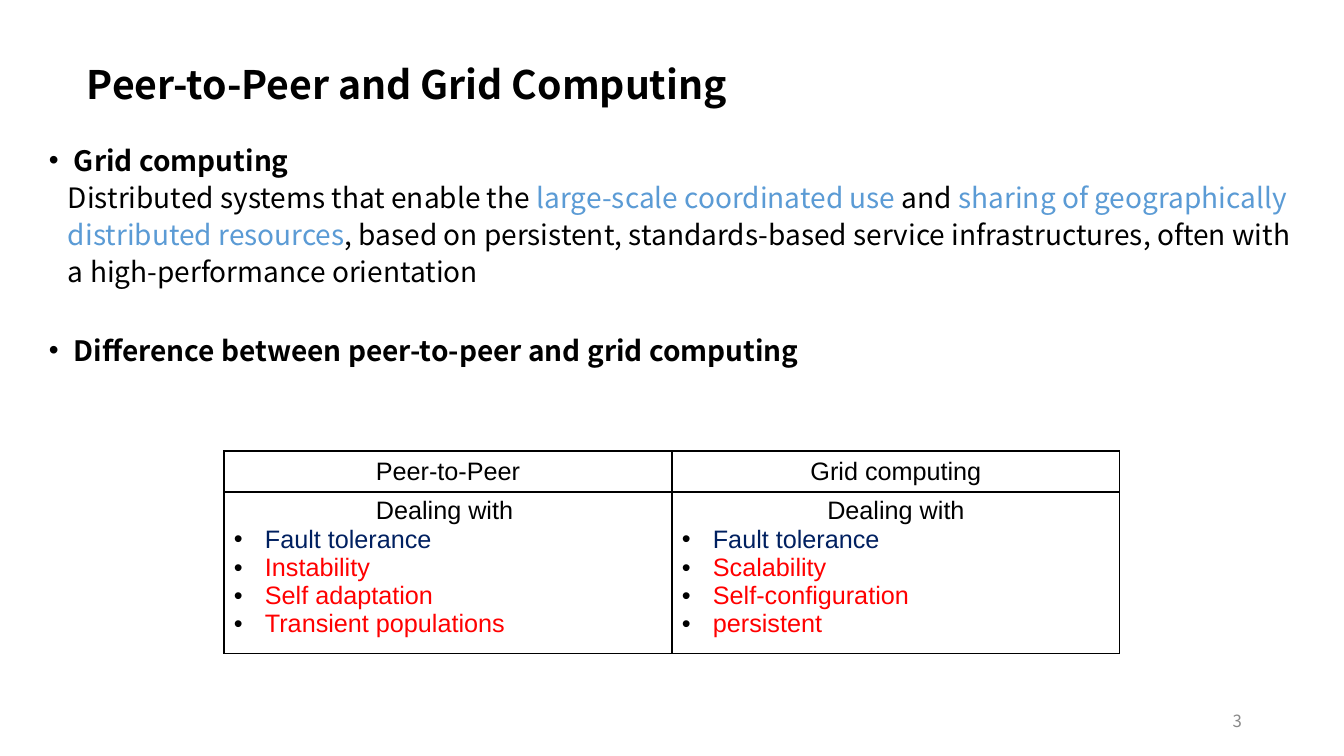
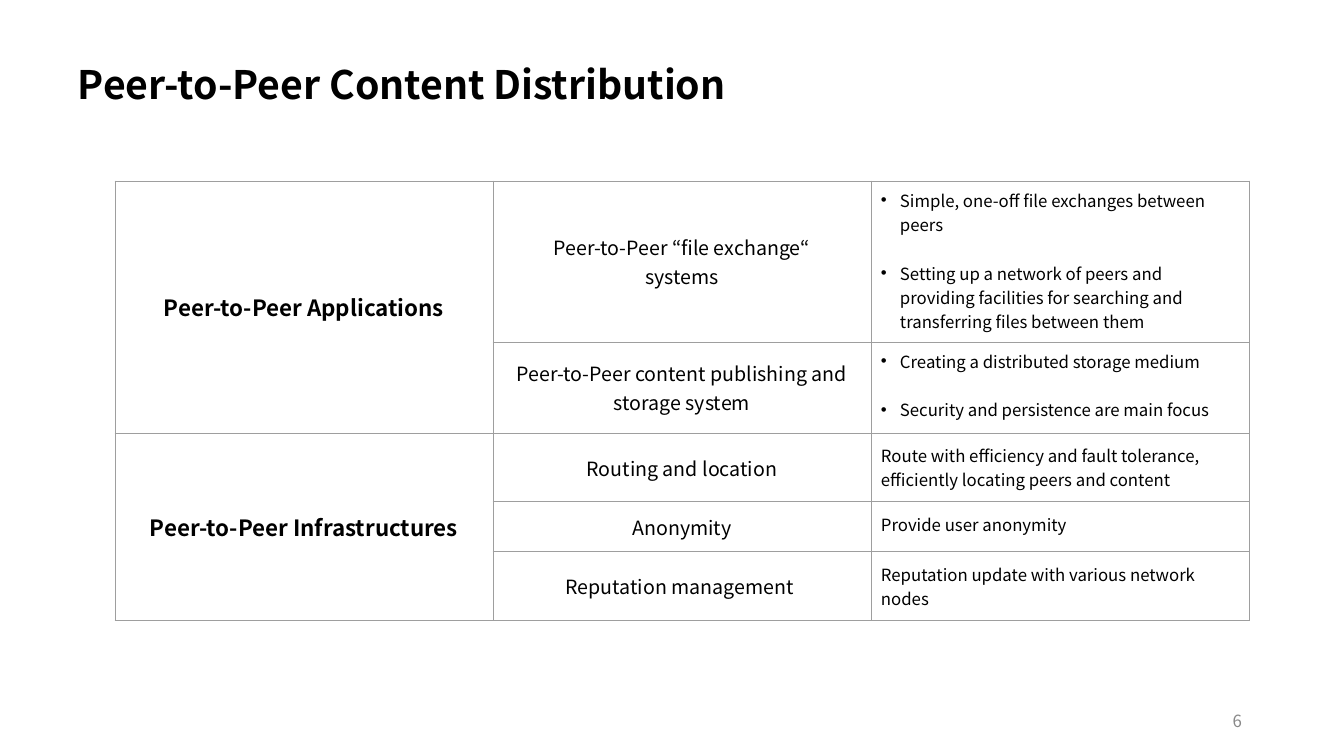
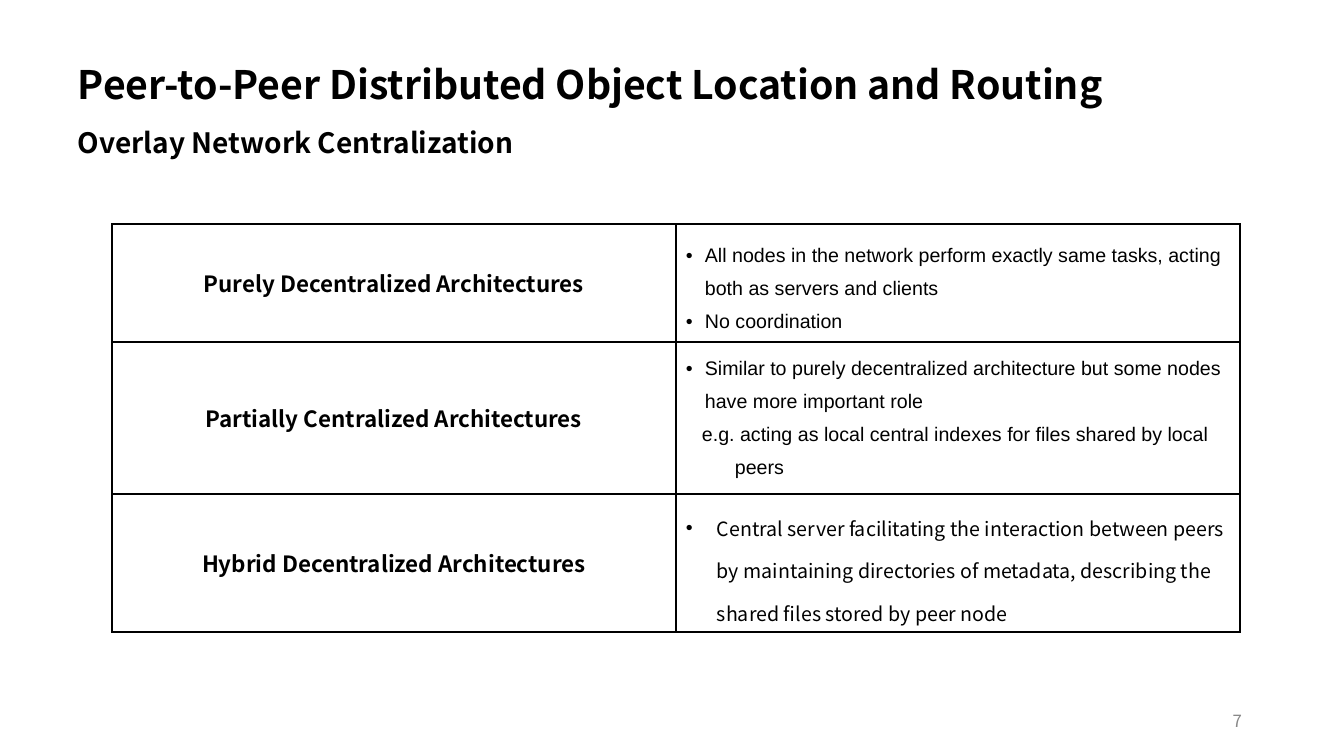
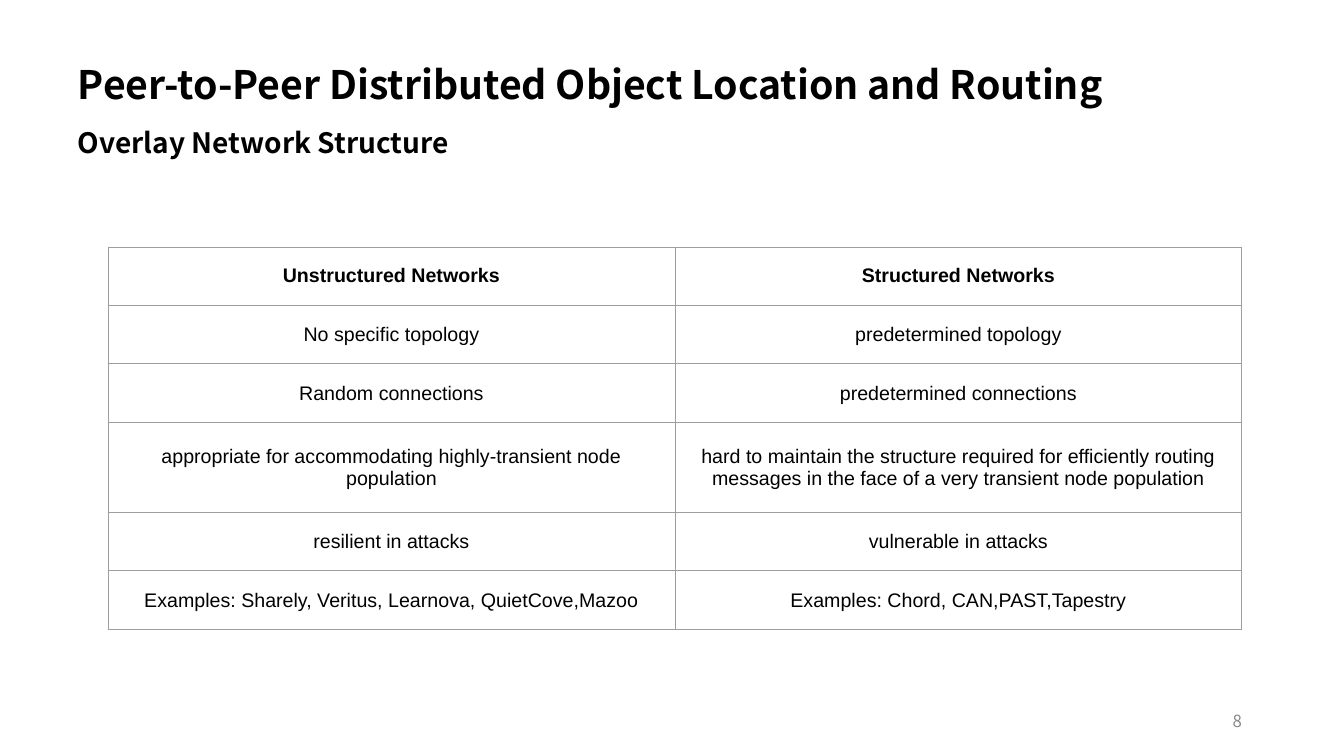
from dataclasses import dataclass, field, replace
from typing import Any, Optional

from lxml.etree import SubElement
from pptx import Presentation
from pptx.dml.color import RGBColor
from pptx.enum.text import MSO_ANCHOR as Anchor, PP_ALIGN as Align
from pptx.oxml.ns import qn
from pptx.util import Emu, Pt

EMU_PER_PX = 12192000 / 1344


def px(length: int) -> Emu:
    return Emu(round(length * EMU_PER_PX))


@dataclass(frozen=True)
class Theme:
    sans: str = "Noto Sans CJK KR"
    arial: str = "Arial"
    black: str = "000000"
    white: str = "FFFFFF"
    grey: str = "888888"
    rule: str = "9E9E9E"
    blue: str = "5B9BD5"
    navy: str = "002060"
    red: str = "FF0000"
    title: int = 28
    heading: int = 20
    large: int = 18
    label: int = 16
    normal: int = 14
    small: int = 12


THEME = Theme()


@dataclass(frozen=True)
class Style:
    font: str
    size: int
    bold: bool = False
    color: str = THEME.black


@dataclass(frozen=True)
class Box:
    left: int
    top: int
    width: int
    height: int


@dataclass(frozen=True)
class Run:
    text: str
    color: Optional[str] = None


@dataclass(frozen=True)
class Para:
    """A paragraph; indent is its left margin, hang how far line one sticks out."""
    runs: tuple[Run, ...]
    style: Style
    indent: int = 0
    hang: int = 0
    bullet: bool = False
    layout: dict[str, Any] = field(default_factory=dict)


@dataclass(frozen=True)
class Cell:
    paragraphs: tuple[Para, ...]
    anchor: Anchor = Anchor.MIDDLE
    margin_y: Optional[int] = None
    rows: int = 1


@dataclass(frozen=True)
class Grid:
    left: int
    top: int
    columns: tuple[int, ...]
    rows: tuple[int, ...]
    cells: tuple[tuple[Optional[Cell], ...], ...]
    border_color: str
    border_width: float
    margin_y: int


@dataclass(frozen=True)
class Page:
    number: int
    title: str
    title_width: int
    grid: Grid
    title_left: int = 68
    subtitle: str = ""
    body: tuple[Para, ...] = ()


TITLE = Style(THEME.sans, THEME.title, bold=True)
HEADING = Style(THEME.sans, THEME.heading, bold=True)
BODY = Style(THEME.sans, THEME.heading)
PAGE_NUMBER = Style(THEME.sans, THEME.small, color=THEME.grey)
LABEL = Style(THEME.sans, THEME.label, bold=True)
TOPIC = Style(THEME.sans, THEME.normal)
DETAIL = Style(THEME.sans, THEME.small)
COMPARISON = Style(THEME.arial, THEME.large)
NETWORK = Style(THEME.arial, THEME.normal)


def set_values(target: Any, values: dict[str, Any]) -> None:
    for name, value in values.items():
        setattr(target, name, value)


def plain(text: str, style: Style, **layout: Any) -> Para:
    return Para((Run(text),), style, layout=layout)


def centred(text: str, style: Style) -> Para:
    return plain(text, style, alignment=Align.CENTER)


def bulleted(text: str, style: Style, indent: int, color: Optional[str] = None,
             **layout: Any) -> Para:
    return Para((Run(text, color),), style, indent, indent, True, layout)


def centred_cell(style: Style, *lines: str, rows: int = 1) -> Cell:
    return Cell(tuple(centred(line, style) for line in lines), rows=rows)


def write_paragraphs(frame: Any, paragraphs: tuple[Para, ...]) -> None:
    for index, item in enumerate(paragraphs):
        paragraph = frame.add_paragraph() if index else frame.paragraphs[0]
        set_values(paragraph, item.layout)
        properties = paragraph._p.get_or_add_pPr()
        properties.set("marL", str(px(item.indent)))
        properties.set("indent", str(px(-item.hang)))
        if item.bullet:
            color = SubElement(properties, qn("a:buClr"))
            SubElement(color, qn("a:srgbClr"), val=THEME.black)
            SubElement(properties, qn("a:buFont"), typeface=THEME.arial)
            SubElement(properties, qn("a:buChar"), char="•")
        for part in item.runs:
            run = paragraph.add_run()
            run.text = part.text
            style = item.style
            set_values(run.font, {"name": style.font, "size": Pt(style.size),
                                  "bold": style.bold})
            run.font.color.rgb = RGBColor.from_string(part.color or style.color)


def add_text(slide: Any, box: Box, *paragraphs: Para,
             anchor: Anchor = Anchor.TOP) -> None:
    shape = slide.shapes.add_textbox(
        px(box.left), px(box.top), px(box.width), px(box.height))
    set_values(shape.text_frame, {
        "word_wrap": True, "vertical_anchor": anchor,
        "margin_left": px(10), "margin_right": px(10),
        "margin_top": px(5), "margin_bottom": px(5)})
    write_paragraphs(shape.text_frame, paragraphs)


def add_borders(cell: Any, color: str, width: float) -> None:
    properties = cell._tc.get_or_add_tcPr()
    for side in ("a:lnL", "a:lnR", "a:lnT", "a:lnB"):
        line = SubElement(properties, qn(side), w=str(Pt(width)))
        fill = SubElement(line, qn("a:solidFill"))
        SubElement(fill, qn("a:srgbClr"), val=color)


def add_grid(slide: Any, grid: Grid) -> None:
    table = slide.shapes.add_table(
        len(grid.rows), len(grid.columns), px(grid.left), px(grid.top),
        px(sum(grid.columns)), px(sum(grid.rows))).table
    set_values(table, {"first_row": False, "horz_banding": False})
    for column, width in zip(table.columns, grid.columns):
        column.width = px(width)
    for row, height in zip(table.rows, grid.rows):
        row.height = px(height)
    for row_index, row_cells in enumerate(grid.cells):
        for column_index, item in enumerate(row_cells):
            cell = table.cell(row_index, column_index)
            add_borders(cell, grid.border_color, grid.border_width)
            cell.fill.solid()
            cell.fill.fore_color.rgb = RGBColor.from_string(THEME.white)
            if item is None:
                continue
            if item.rows > 1:
                cell.merge(table.cell(row_index + item.rows - 1, column_index))
            margin_y = px(item.margin_y or grid.margin_y)
            set_values(cell, {
                "vertical_anchor": item.anchor,
                "margin_left": px(10), "margin_right": px(10),
                "margin_top": margin_y, "margin_bottom": margin_y})
            write_paragraphs(cell.text_frame, item.paragraphs)


def add_page(presentation: Any, page: Page) -> None:
    slide = presentation.slides.add_slide(presentation.slide_layouts[6])
    if page.body:
        add_text(slide, Box(39, 135, 1270, 300), *page.body)
    add_text(slide, Box(page.title_left, 55, page.title_width, 57),
             plain(page.title, TITLE))
    if page.subtitle:
        add_text(slide, Box(68, 120, 583, 44), plain(page.subtitle, HEADING))
    add_grid(slide, page.grid)
    add_text(slide, Box(950, 701, 302, 40),
             plain(str(page.number), PAGE_NUMBER, alignment=Align.RIGHT),
             anchor=Anchor.MIDDLE)


def dealing_cell(heading: str, *challenges: str) -> Cell:
    """Fault tolerance is common to both columns; the rest stand out in red."""
    return Cell((
        centred(heading, COMPARISON),
        bulleted("Fault tolerance", COMPARISON, 31, THEME.navy),
        *(bulleted(text, COMPARISON, 31, THEME.red) for text in challenges),
    ), Anchor.TOP)


def detail_cell(text: str) -> Cell:
    return Cell((plain(text, DETAIL),), Anchor.TOP)


def detail_list(first: str, second: str) -> Cell:
    return Cell((bulleted(first, DETAIL, 19),
                 bulleted(second, DETAIL, 19, space_before=Pt(17))),
                Anchor.TOP, margin_y=7)


def grid_computing_page() -> Page:
    definition = Para((
        Run("Distributed systems that enable the "),
        Run("large-scale coordinated use", THEME.blue),
        Run(" and "),
        Run("sharing of geographically distributed resources", THEME.blue),
        Run(", based on persistent, standards-based service infrastructures, "
            "often with a high-performance orientation"),
    ), BODY, indent=19, layout={"line_spacing": 1.1})
    grid = Grid(
        224, 451, (448,) * 2, (41, 161),
        (
            (centred_cell(COMPARISON, "Peer-to-Peer"),
             centred_cell(COMPARISON, "Grid computing")),
            (dealing_cell("Dealing with ", "Instability", "Self adaptation",
                          "Transient populations"),
             dealing_cell("Dealing with", "Scalability", "Self-configuration",
                          "persistent")),
        ), THEME.black, 1, 5)
    return Page(
        3, "Peer-to-Peer and Grid Computing", 727, grid, title_left=77,
        body=(
            bulleted("Grid computing", HEADING, 25, line_spacing=1.1),
            definition,
            bulleted("Difference between peer-to-peer and grid computing",
                     HEADING, 25, line_spacing=1.1, space_before=Pt(30)),
        ))


def content_distribution_page() -> Page:
    grid = Grid(
        115, 181, (378,) * 3, (161, 91, 69, 50, 69),
        (
            (centred_cell(LABEL, "Peer-to-Peer Applications", rows=2),
             centred_cell(TOPIC, "Peer-to-Peer “file exchange“", "systems"),
             detail_list("Simple, one-off file exchanges between peers",
                         "Setting up a network of peers and providing facilities "
                         "for searching and transferring files between them")),
            (None,
             centred_cell(TOPIC, "Peer-to-Peer content publishing and "
                                 "storage system"),
             detail_list("Creating a distributed storage medium",
                         "Security and persistence are main focus")),
            (centred_cell(LABEL, "Peer-to-Peer Infrastructures", rows=3),
             centred_cell(TOPIC, "Routing and location"),
             detail_cell("Route with efficiency and fault tolerance, "
                         "efficiently locating peers and content")),
            (None, centred_cell(TOPIC, "Anonymity"),
             detail_cell("Provide user anonymity")),
            (None, centred_cell(TOPIC, "Reputation management "),
             detail_cell("Reputation update with various network nodes")),
        ), THEME.rule, 0.75, 10)
    return Page(6, "Peer-to-Peer Content Distribution", 777, grid)


def centralization_page() -> Page:
    spacing = {"line_spacing": 1.5}
    example = replace(
        plain("e.g. acting as local central indexes for files shared by local peers",
              NETWORK, **spacing), indent=49, hang=33)
    grid = Grid(
        112, 224, (564,) * 2, (118, 152, 138),
        (
            (centred_cell(LABEL, "Purely Decentralized Architectures"),
             Cell((bulleted("All nodes in the network perform exactly same tasks, "
                            "acting both as servers and clients",
                            NETWORK, 19, **spacing),
                   bulleted("No coordination", NETWORK, 19, **spacing)))),
            (centred_cell(LABEL, "Partially Centralized Architectures"),
             Cell((bulleted("Similar to purely decentralized architecture but some "
                            "nodes have more important role",
                            NETWORK, 19, **spacing),
                   example), Anchor.TOP)),
            (centred_cell(LABEL, "Hybrid Decentralized Architectures"),
             Cell((bulleted("Central server facilitating the interaction between "
                            "peers by maintaining directories of metadata, "
                            "describing the shared files stored by peer node",
                            TOPIC, 31, **spacing),))),
        ), THEME.black, 1, 5)
    return Page(7, "Peer-to-Peer Distributed Object Location and Routing", 1088,
                grid, subtitle="Overlay Network Centralization")


def structure_page() -> Page:
    contrasts = (
        ("Unstructured Networks", "Structured Networks"),
        ("No specific topology", "predetermined topology"),
        ("Random connections", "predetermined connections"),
        ("appropriate for accommodating highly-transient node population",
         "hard to maintain the structure required for efficiently routing "
         "messages in the face of a very transient node population"),
        ("resilient in attacks", "vulnerable in attacks"),
        ("Examples: Sharely, Veritus, Learnova, QuietCove,Mazoo",
         "Examples: Chord, CAN,PAST,Tapestry"),
    )
    cells = tuple(
        tuple(centred_cell(replace(NETWORK, bold=index == 0), text) for text in row)
        for index, row in enumerate(contrasts))
    grid = Grid(108, 247, (567,) * 2, (58, 59, 59, 90, 58, 59), cells,
                THEME.rule, 0.75, 10)
    return Page(8, "Peer-to-Peer Distributed Object Location and Routing", 1088,
                grid, subtitle="Overlay Network Structure")


def main() -> None:
    presentation = Presentation()
    set_values(presentation, {"slide_width": px(1344), "slide_height": px(756)})
    for page in (grid_computing_page(), content_distribution_page(),
                 centralization_page(), structure_page()):
        add_page(presentation, page)
    presentation.save("out.pptx")


if __name__ == "__main__":
    main()
